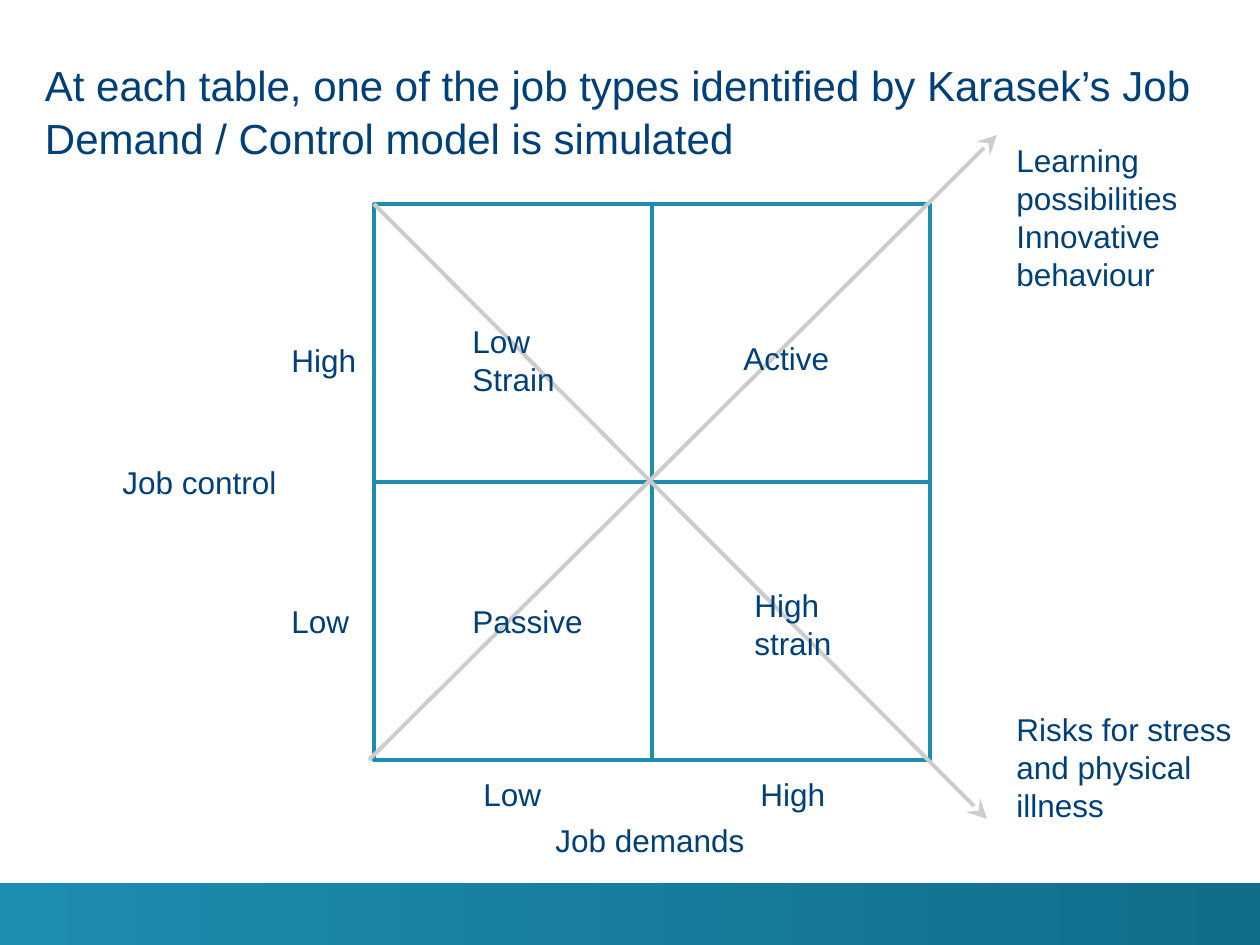
from dataclasses import dataclass
from itertools import product

from lxml import etree
from pptx import Presentation
from pptx import util as u
from pptx.dml.color import RGBColor
from pptx.enum import shapes, text
from pptx.oxml import ns

PX = u.Inches(1) // 126
SLIDE_WIDTH, SLIDE_HEIGHT = 1260, 945


@dataclass(frozen=True)
class Theme:
    font: str = "Arial"
    ink: str = "00407A"
    teal: str = "1D8DB0"
    deep_teal: str = "116E8A"
    grey: str = "CCCCCC"
    title_size: float = 24
    label_size: float = 18
    grid_line: float = 2
    arrow_line: float = 2.25


@dataclass(frozen=True)
class Label:
    words: str
    left: int
    top: int
    width: int
    height: int = 50
    wrap: bool = False


@dataclass(frozen=True)
class Arrow:
    start: tuple[int, int]
    end: tuple[int, int]


THEME = Theme()
GRID_LEFT, GRID_TOP, CELL = 374, 204, 278
BAND_TOP = 883

TITLE = Label(
    "At each table, one of the job types identified by Karasek’s Job "
    "Demand / Control model is simulated", 45, 57, 1148, 110, True)

LABELS = [
    Label("Job demands", 543, 815, 217),
    Label("Job control", 110, 457, 181),
    Label("Low", 471, 769, 83),
    Label("Low", 279, 596, 83),
    Label("High", 748, 769, 91),
    Label("High", 279, 335, 91),
    Label("High\nstrain", 742, 580, 103, 89),
    Label("Passive", 460, 596, 137),
    Label("Low\nStrain", 460, 316, 108, 89),
    Label("Active", 731, 333, 112),
    Label("Learning\vpossibilities\vInnovative\vbehaviour", 1004, 135, 188, 165),
    Label("Risks for stress and physical illness", 1004, 704, 252, 127, True),
]

ARROWS = [
    Arrow((369, 760), (997, 135)),
    Arrow((GRID_LEFT, GRID_TOP), (987, 819)),
]


def px(*lengths: int) -> list[int]:
    return [length * PX for length in lengths]


def add_rectangle(slide, left: int, top: int, width: int, height: int):
    shape = slide.shapes.add_shape(
        shapes.MSO_SHAPE.RECTANGLE, *px(left, top, width, height))
    shape.shadow.inherit = False
    return shape


def add_band(slide) -> None:
    band = add_rectangle(slide, 0, BAND_TOP, SLIDE_WIDTH, SLIDE_HEIGHT - BAND_TOP)
    band.line.fill.background()
    band.fill.gradient()
    band.fill.gradient_angle = 0
    for stop, color in zip(band.fill.gradient_stops, (THEME.teal, THEME.deep_teal)):
        stop.color.rgb = RGBColor.from_string(color)


def add_quadrant(slide, row: int, column: int) -> None:
    quadrant = add_rectangle(
        slide, GRID_LEFT + column * CELL, GRID_TOP + row * CELL, CELL, CELL)
    quadrant.fill.background()
    quadrant.line.color.rgb = RGBColor.from_string(THEME.teal)
    quadrant.line.width = u.Pt(THEME.grid_line)


def add_label(slide, label: Label, size: float = THEME.label_size):
    """Add left-aligned text; a newline starts a paragraph, a vertical tab a line."""
    box = slide.shapes.add_textbox(
        *px(label.left, label.top, label.width, label.height))
    frame = box.text_frame
    frame.word_wrap = label.wrap
    frame.vertical_anchor = text.MSO_ANCHOR.TOP
    frame.text = label.words
    font_values = {"name": THEME.font, "size": u.Pt(size)}
    for paragraph in frame.paragraphs:
        for run in paragraph.runs:
            for name, value in font_values.items():
                setattr(run.font, name, value)
            run.font.color.rgb = RGBColor.from_string(THEME.ink)
    return frame


def add_title(slide) -> None:
    frame = add_label(slide, TITLE, THEME.title_size)
    for side in ("left", "top", "right", "bottom"):
        setattr(frame, f"margin_{side}", 0)
    frame.paragraphs[0].line_spacing = 1.05


def add_arrow(slide, arrow: Arrow) -> None:
    connector = slide.shapes.add_connector(
        shapes.MSO_CONNECTOR.STRAIGHT, *px(*arrow.start, *arrow.end))
    connector.line.color.rgb = RGBColor.from_string(THEME.grey)
    connector.line.width = u.Pt(THEME.arrow_line)
    properties = connector.element.spPr
    line = properties.find(ns.qn("a:ln"))
    etree.SubElement(line, ns.qn("a:tailEnd"), type="stealth", w="lg", len="lg")
    etree.SubElement(properties, ns.qn("a:effectLst"))


def main() -> None:
    presentation = Presentation()
    presentation.slide_width, presentation.slide_height = px(SLIDE_WIDTH, SLIDE_HEIGHT)
    slide = presentation.slides.add_slide(presentation.slide_layouts[6])
    add_band(slide)
    add_title(slide)
    for row, column in product(range(2), repeat=2):
        add_quadrant(slide, row, column)
    for arrow in ARROWS:
        add_arrow(slide, arrow)
    for label in LABELS:
        add_label(slide, label)
    presentation.save("out.pptx")


if __name__ == "__main__":
    main()
